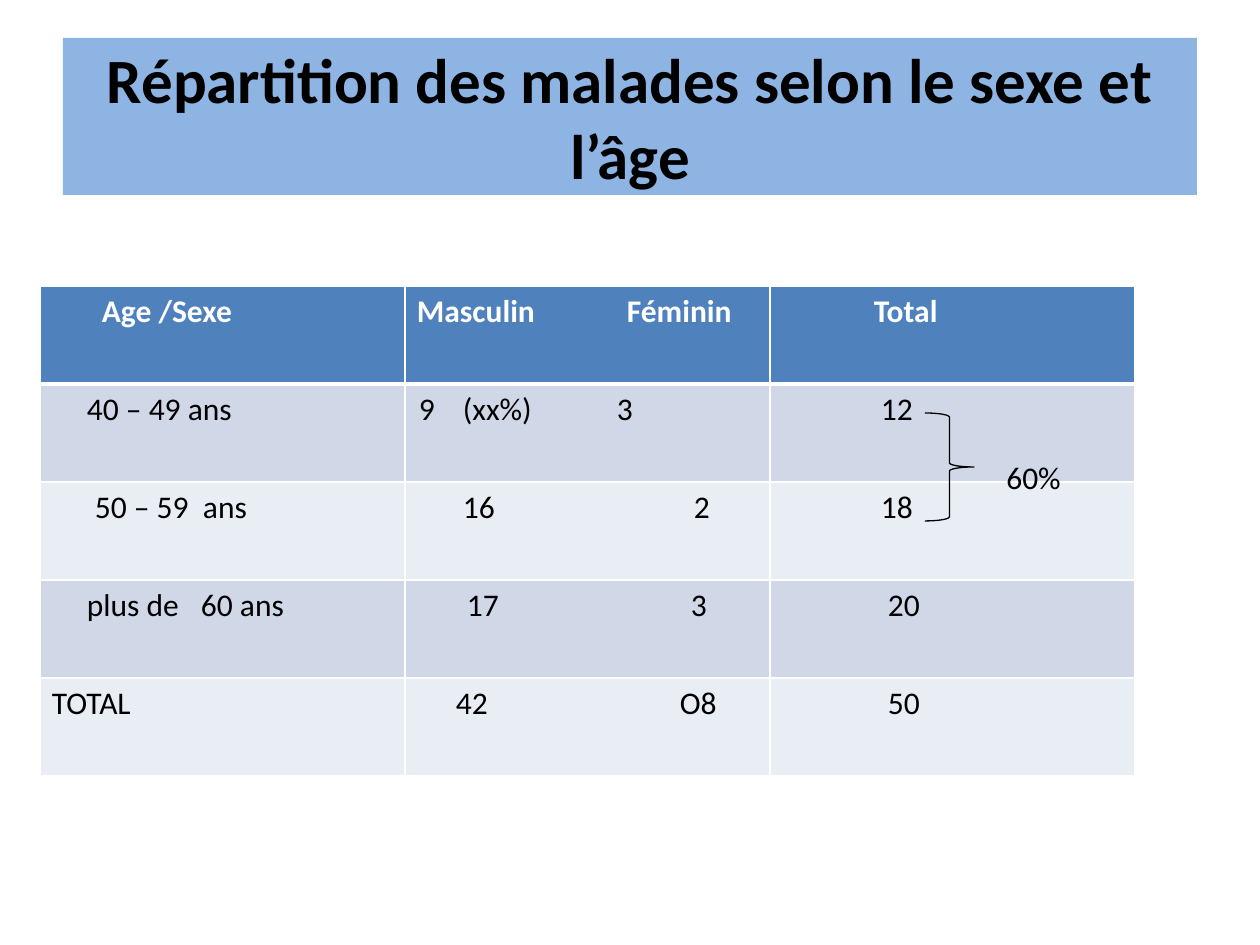
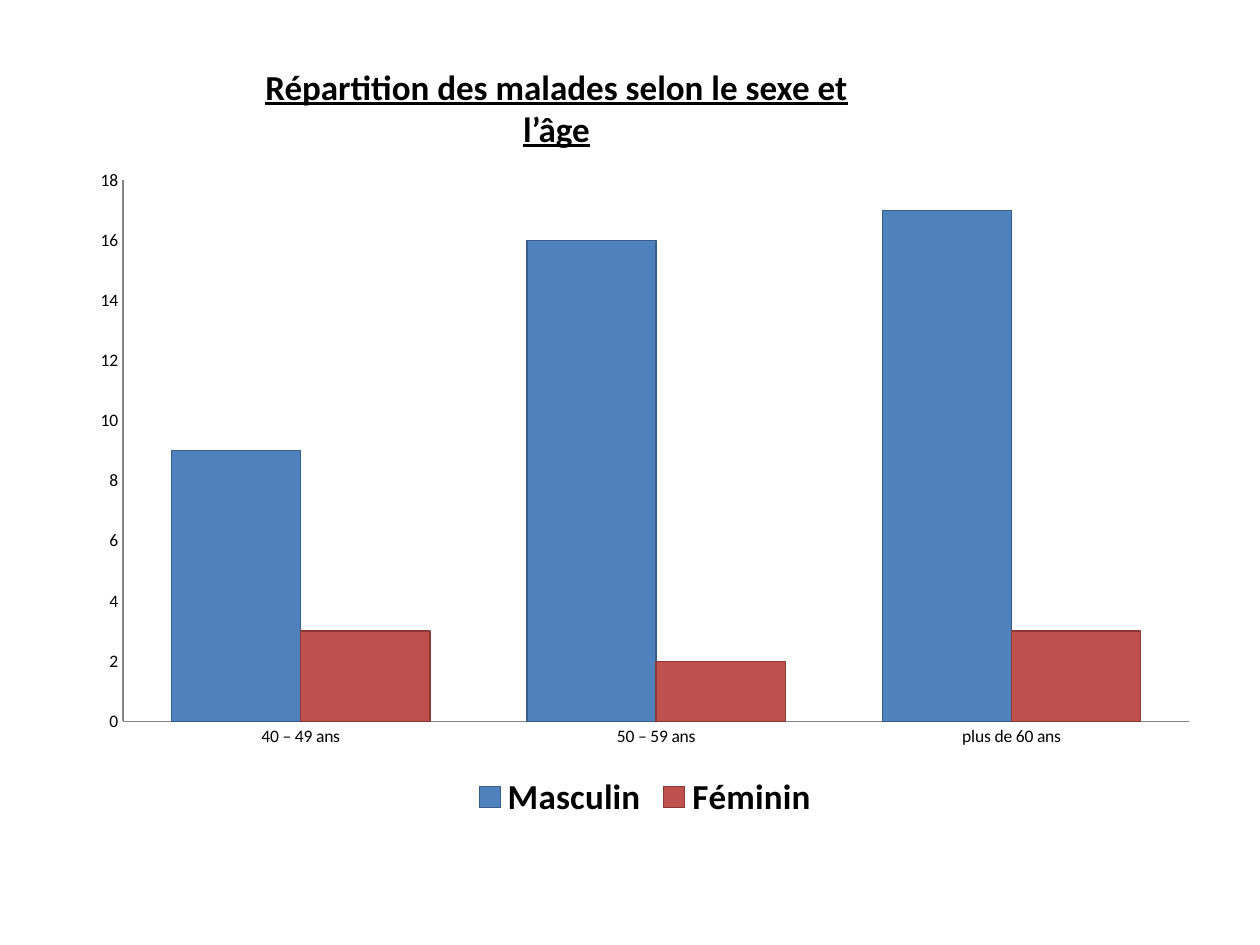
from lxml import etree
from pptx import Presentation, util as u
from pptx.chart.data import CategoryChartData
from pptx.dml.color import RGBColor
from pptx.enum import chart as ch, shapes, text
from pptx.oxml.ns import qn

PX = 7257  # EMU in one px, 126 px to the inch
FONT = "Calibri"
BLACK, WHITE = "000000", "FFFFFF"
BLUE, RED, BAND = "4F81BD", "C0504D", "8EB4E3"
PALE, LIGHT = "D0D8E8", "E9EDF4"
TITLE = "Répartition des malades selon le sexe et l’âge"


def paint(fill, color):
    fill.solid()
    fill.fore_color.rgb = RGBColor.from_string(color)


def write(frame, words, size=18, color=BLACK, bold=False, line=False,
          align=text.PP_ALIGN.LEFT, tabs=()):
    frame.word_wrap = True
    par = frame.paragraphs[0]
    par.alignment = align
    run = par.add_run()
    run.text = words
    font = run.font
    font.name, font.size = FONT, u.Pt(size)
    font.bold, font.underline = bold, line
    paint(font.fill, color)
    if tabs:
        stops = etree.SubElement(par._p.get_or_add_pPr(), qn("a:tabLst"))
        for tab in tabs:
            etree.SubElement(stops, qn("a:tab"), pos=str(tab * PX), algn="l")


deck = Presentation()
deck.slide_width, deck.slide_height = u.Inches(10), u.Inches(7.5)
blank = deck.slide_layouts[6]

# Slide 1: title band
page = deck.slides.add_slide(blank)
band = page.shapes.add_shape(shapes.MSO_SHAPE.RECTANGLE,
                             63 * PX, 38 * PX, 1134 * PX, 157 * PX)
band.shadow.inherit = False
paint(band.fill, BAND)
band.line.fill.background()
band.text_frame.vertical_anchor = text.MSO_ANCHOR.MIDDLE
write(band.text_frame, TITLE, size=36, bold=True, align=text.PP_ALIGN.CENTER)

# Table: each cell holds pieces of text with their left edge on the slide
LEFT, TOP, WIDE, HIGH = 40, 286, 365, 98
rows = [
    [[(102, "Age /Sexe")], [(417, "Masculin"), (627, "Féminin")], [(874, "Total")]],
    [[(87, "40 – 49 ans")], [(419, "9"), (463, "(xx%)"), (617, "3")], [(881, "12")]],
    [[(95, "50 – 59"), (203, "ans")], [(463, "16"), (694, "2")], [(881, "18")]],
    [[(87, "plus de"), (201, "60 ans")], [(467, "17"), (691, "3")], [(888, "20")]],
    [[(52, "TOTAL")], [(456, "42"), (680, "O8")], [(888, "50")]],
]
table = page.shapes.add_table(len(rows), 3, LEFT * PX, TOP * PX,
                              3 * WIDE * PX, len(rows) * HIGH * PX).table
table.first_row = table.horz_banding = False
for r, row in enumerate(rows):
    for c, parts in enumerate(row):
        cell = table.cell(r, c)
        start = parts[0][0]
        cell.margin_left = (start - LEFT - c * WIDE) * PX
        cell.margin_right = 0
        write(cell.text_frame, "\t".join(words for _, words in parts),
              color=BLACK if r else WHITE, bold=r == 0,
              tabs=[x - start for x, _ in parts[1:]])
        paint(cell.fill, (PALE if r % 2 else LIGHT) if r else BLUE)

        # White borders, thick below the header
        props = cell._tc.get_or_add_tcPr()
        for i, side in enumerate("LRTB"):
            thick = (r, side) in ((0, "B"), (1, "T"))
            edge = etree.Element(qn("a:ln" + side), w=str(u.Pt(3 if thick else 1)))
            solid = etree.SubElement(edge, qn("a:solidFill"))
            etree.SubElement(solid, qn("a:srgbClr"), val=WHITE)
            props.insert(i, edge)

# Brace joining the two youngest groups
brace = page.shapes.add_shape(shapes.MSO_SHAPE.RIGHT_BRACE,
                              925 * PX, 413 * PX, 49 * PX, 108 * PX)
brace.shadow.inherit = False
brace.fill.background()
paint(brace.line.fill, BLACK)
brace.line.width = u.Pt(0.75)
share = page.shapes.add_textbox(994 * PX, 452 * PX, 98 * PX, 50 * PX)
write(share.text_frame, "60%")

# Slide 2: column chart
page = deck.slides.add_slide(blank)
data = CategoryChartData()
data.categories = ["40 – 49 ans", "50 – 59 ans", "plus de 60 ans"]
data.add_series("Masculin", [9, 16, 17])
data.add_series("Féminin", [3, 2, 3])
chart = page.shapes.add_chart(ch.XL_CHART_TYPE.COLUMN_CLUSTERED, 78 * PX, 157 * PX,
                              1134 * PX, 669 * PX, data).chart
chart.has_title = False
chart.font.name, chart.font.size = FONT, u.Pt(10)
paint(chart.font.fill, BLACK)

plot = chart.plots[0]
plot.gap_width, plot.overlap = 75, 0
plot.vary_by_categories = False
for bars, color, rim in zip(plot.series, (BLUE, RED), ("385D8A", "8C3836")):
    paint(bars.format.fill, color)
    paint(bars.format.line.fill, rim)
    bars.format.line.width = u.Pt(0.75)

for axis in (chart.category_axis, chart.value_axis):
    axis.major_tick_mark = axis.minor_tick_mark = ch.XL_TICK_MARK.NONE
    axis.has_major_gridlines = False
    paint(axis.format.line.fill, "868686")
    axis.format.line.width = u.Pt(0.75)
chart.value_axis.minimum_scale, chart.value_axis.maximum_scale = 0, 18
chart.value_axis.major_unit = 2

chart.has_legend = True
legend = chart.legend
legend.position = ch.XL_LEGEND_POSITION.BOTTOM
legend.include_in_layout = False
legend.font.name, legend.font.size, legend.font.bold = FONT, u.Pt(20), True
paint(legend.font.fill, BLACK)

# Chart heading
head = page.shapes.add_textbox(227 * PX, 59 * PX, 659 * PX, 97 * PX)
write(head.text_frame, TITLE, size=20, bold=True, line=True,
      align=text.PP_ALIGN.CENTER)

deck.save("out.pptx")
